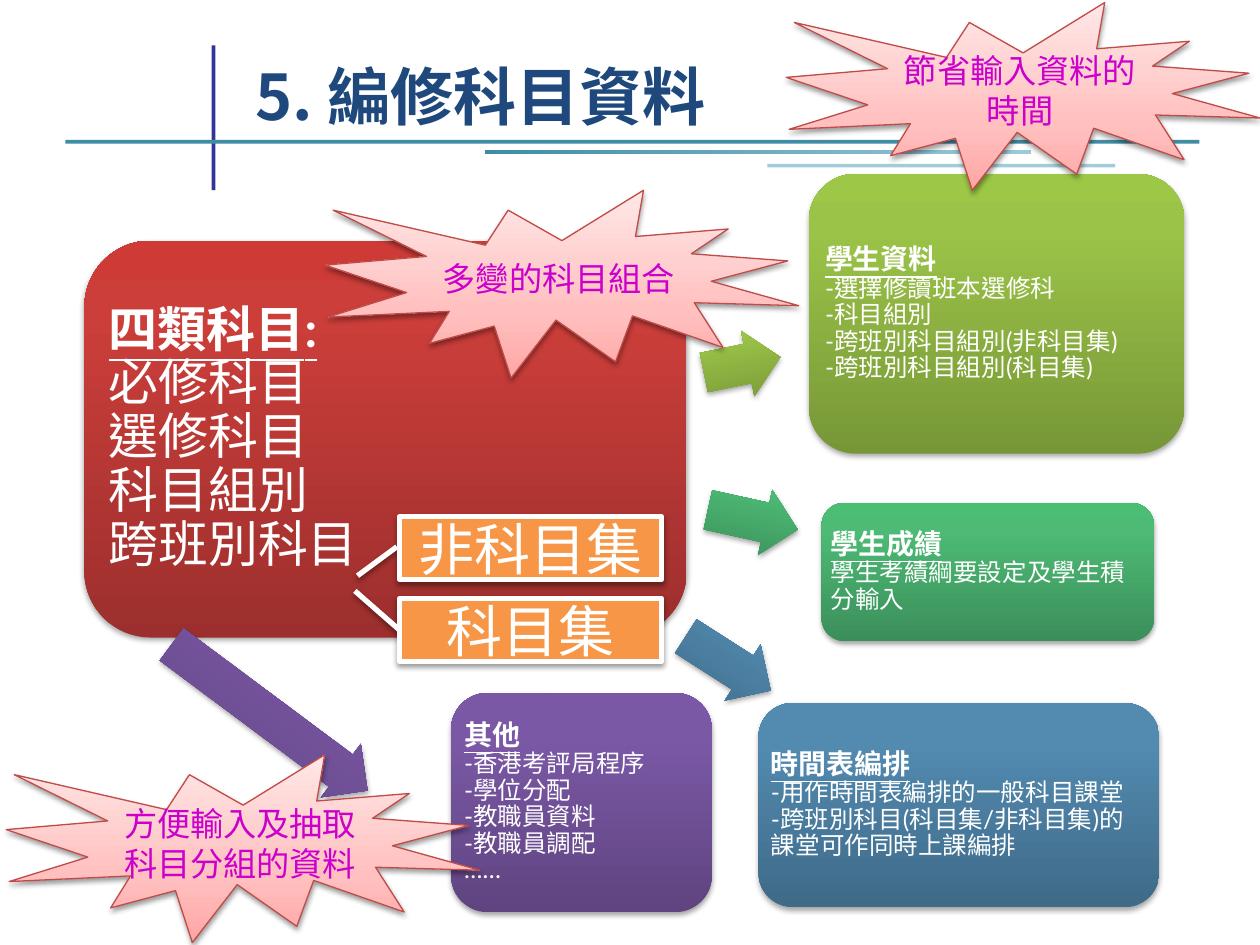
from lxml.etree import SubElement
from pptx import Presentation
from pptx.dml.color import RGBColor
from pptx.enum.lang import MSO_LANGUAGE_ID
from pptx.enum.shapes import MSO_SHAPE
from pptx.enum.text import MSO_ANCHOR, PP_ALIGN
from pptx.oxml.ns import qn
from pptx.util import Inches, Pt

COLOURS = {
    "title": "1F497D", "white": "FFFFFF", "black": "000000", "orange": "F79646",
    "magenta": "CC00CC", "seal_line": "BF4C48",
    "navy": "333399", "teal": "3F8DA5", "teal_light": "9BCAD9", "teal_pale": "A1CDDB",
    "red_dark": "9C2F2D", "red_mid": "CB3E3A", "red_light": "CE3B37",
    "lime_dark": "779737", "lime_mid": "9BC348", "lime_light": "9DC746",
    "green_dark": "3B8F5A", "green_mid": "4DBA75", "green_light": "4BBD75",
    "blue_dark": "3F6A88", "blue_mid": "528AB0", "blue_light": "518BB3",
    "purple_dark": "5F4480", "purple_mid": "7B58A6", "purple_light": "7C57A8",
    "pink_dark": "FFA6A5", "pink_mid": "FFC0BF", "pink_light": "FFE7E7",
}
COLUMNS, ROWS = 100, 75


def write_text(frame, lines, size, font="Lato", east_asian="Lato", colour="white",
               bold=False, align=PP_ALIGN.LEFT, anchor=MSO_ANCHOR.MIDDLE,
               spacing=1.0, heading=None, margins=(0.1, 0.05)):
    """Write one paragraph per line; a heading size makes the first line a heading."""
    frame.word_wrap = True
    frame.vertical_anchor = anchor
    frame.margin_left = frame.margin_right = Inches(margins[0])
    frame.margin_top = frame.margin_bottom = Inches(margins[1])
    for index, line in enumerate(lines):
        is_heading = heading is not None and index == 0
        paragraph = frame.paragraphs[0] if index == 0 else frame.add_paragraph()
        paragraph.alignment = align
        paragraph.line_spacing = spacing
        paragraph.space_before = paragraph.space_after = Pt(0)
        run = paragraph.add_run()
        run.text = line
        run.font.size = Pt(heading if is_heading else size)
        run.font.name = font
        run.font.bold = bold or is_heading
        run.font.underline = is_heading
        run.font.language_id = MSO_LANGUAGE_ID.CHINESE_HONG_KONG_SAR
        run.font.color.rgb = RGBColor.from_string(COLOURS[colour])
        SubElement(run.font._element, qn("a:ea"), typeface=east_asian)


class SlideBuilder:
    def __init__(self, presentation):
        self.slide = presentation.slides.add_slide(presentation.slide_layouts[5])
        self.column = presentation.slide_width / COLUMNS
        self.row = presentation.slide_height / ROWS

    def place(self, area):
        left, top, width, height = area
        return (round(left * self.column), round(top * self.row),
                round(width * self.column), round(height * self.row))

    def title(self, text, area):
        shape = self.slide.shapes.title
        shape.left, shape.top, shape.width, shape.height = self.place(area)
        write_text(shape.text_frame, [text], 36, font="Noto Sans CJK TC",
                   east_asian="Noto Sans CJK TC", colour="title", bold=True,
                   anchor=MSO_ANCHOR.BOTTOM)

    def shape(self, kind, area, fill, line=None, shadow=None):
        shape = self.slide.shapes.add_shape(kind, *self.place(area))
        shape.shadow.inherit = False
        if shadow:
            self.add_shadow(shape, shadow)
        if isinstance(fill, str):
            shape.fill.solid()
            shape.fill.fore_color.rgb = RGBColor.from_string(COLOURS[fill])
        else:
            self.add_gradient(shape, *fill)
        if line:
            shape.line.color.rgb = RGBColor.from_string(COLOURS[line[0]])
            shape.line.width = Pt(line[1])
        else:
            shape.line.fill.background()
        return shape

    def add_gradient(self, shape, stops, angle):
        shape.fill.gradient()
        shape.fill.gradient_angle = angle
        stop_list = next(shape._element.spPr.iter(qn("a:gsLst")))
        for stop in list(stop_list):
            stop_list.remove(stop)
        for position, name in stops:
            stop = SubElement(stop_list, qn("a:gs"), pos=str(position * 1000))
            SubElement(stop, qn("a:srgbClr"), val=COLOURS[name])

    def add_shadow(self, shape, opacity):
        effects = shape._element.spPr.find(qn("a:effectLst"))
        outer = SubElement(effects, qn("a:outerShdw"), blurRad=str(Pt(3.1)),
                           dist=str(Pt(1.7)), dir="5400000", rotWithShape="0")
        colour = SubElement(outer, qn("a:srgbClr"), val=COLOURS["black"])
        SubElement(colour, qn("a:alpha"), val=str(opacity * 1000))

    def shaded(self, kind, area, hue, middle=80, line=None, shadow=35):
        stops = [(0, hue + "_dark"), (middle, hue + "_mid"), (100, hue + "_light")]
        return self.shape(kind, area, (stops, 90), line, shadow)

    def bar(self, area, fill):
        self.shape(MSO_SHAPE.RECTANGLE, area, fill)

    def card(self, area, hue, lines, size=14, heading=16, margin=0.02):
        shape = self.shaded(MSO_SHAPE.ROUNDED_RECTANGLE, area, hue)
        write_text(shape.text_frame, lines, size, heading=heading, spacing=0.9,
                   margins=(margin, margin))

    def arrow(self, area, hue, rotation):
        shape = self.shaded(MSO_SHAPE.RIGHT_ARROW, area, hue)
        shape.adjustments[0], shape.adjustments[1] = 0.6, 0.5
        shape.rotation = rotation

    def callout(self, area, text, pointer):
        shape = self.shape(MSO_SHAPE.LINE_CALLOUT_1, area, "orange", ("white", 3), 38)
        for index, value in enumerate(pointer):
            shape.adjustments[index] = value
        write_text(shape.text_frame, [text], 32, font="Noto Sans CJK SC",
                   align=PP_ALIGN.CENTER)

    def seal(self, left, top, text):
        shape = self.shaded(MSO_SHAPE.EXPLOSION1, (left, top, 37.6, 14.9), "pink",
                            middle=35, line=("seal_line", 0.75), shadow=38)
        write_text(shape.text_frame, [text], 19, font="Noto Sans CJK SC",
                   colour="magenta", align=PP_ALIGN.CENTER)


def main():
    presentation = Presentation()
    presentation.slide_width, presentation.slide_height = Inches(10), Inches(7.5)
    builder = SlideBuilder(presentation)

    # Title and its rules
    builder.bar((16.8, 3.6, 0.3, 11.5), "navy")
    builder.bar((5.2, 11.1, 90, 0.3), "teal")
    builder.bar((38.5, 11.9, 43.3, 0.3), ([(0, "teal"), (100, "teal_light")], 0))
    builder.bar((60.9, 13, 27.6, 0.3), "teal_pale")
    builder.title("5. 編修科目資料", (19.3, 2.8, 78.3, 8.3))

    # Subject types
    builder.card((6.7, 19.1, 47.8, 31.5), "red",
                 ["四類科目:", "必修科目", "選修科目", "科目組別", "跨班別科目"],
                 size=28.5, heading=28, margin=0.04)

    # Each use of the subjects: arrow, rotation, card
    uses = [
        ("lime", (55.8, 26.3, 6.2, 5.3), 348.5, (64.2, 13.8, 29.8, 22.2),
         ["學生資料", "-選擇修讀班本選修科", "-科目組別",
          "-跨班別科目組別(非科目集)", "-跨班別科目組別(科目集)"]),
        ("green", (56.1, 38.6, 7.3, 5.3), 12.4, (65.2, 39.9, 26.4, 11),
         ["學生成績", "學生考績綱要設定及學生積分輸入"]),
        ("blue", (53.8, 50, 8, 5.3), 32.6, (60.2, 55.8, 31.8, 16.2),
         ["時間表編排", "-用作時間表編排的一般科目課堂",
          "-跨班別科目(科目集/非科目集)的課堂可作同時上課編排"]),
        ("purple", (11.7, 54.3, 19.4, 5.3), 36.7, (35.8, 55, 20.7, 17.4),
         ["其他", "-香港考評局程序", "-學位分配", "-教職員資料", "-教職員調配", "……"]),
    ]
    for hue, arrow_area, rotation, card_area, lines in uses:
        builder.arrow(arrow_area, hue, rotation)
        builder.card(card_area, hue, lines)

    # Kinds of cross-class subject
    builder.callout((31.7, 47.5, 20.8, 5), "科目集", (0.5, 0, -0.12, -0.17))
    builder.callout((31.7, 41, 20.8, 5), "非科目集", (0.48, -0.01, 0.94, -0.16))

    # Benefits
    builder.seal(25.8, 15.1, "多變的科目組合")
    builder.seal(62.4, 0.2, "節省輸入資料的時間")
    builder.seal(0.5, 59.9, "方便輸入及抽取科目分組的資料")

    presentation.save("out.pptx")


if __name__ == "__main__":
    main()
